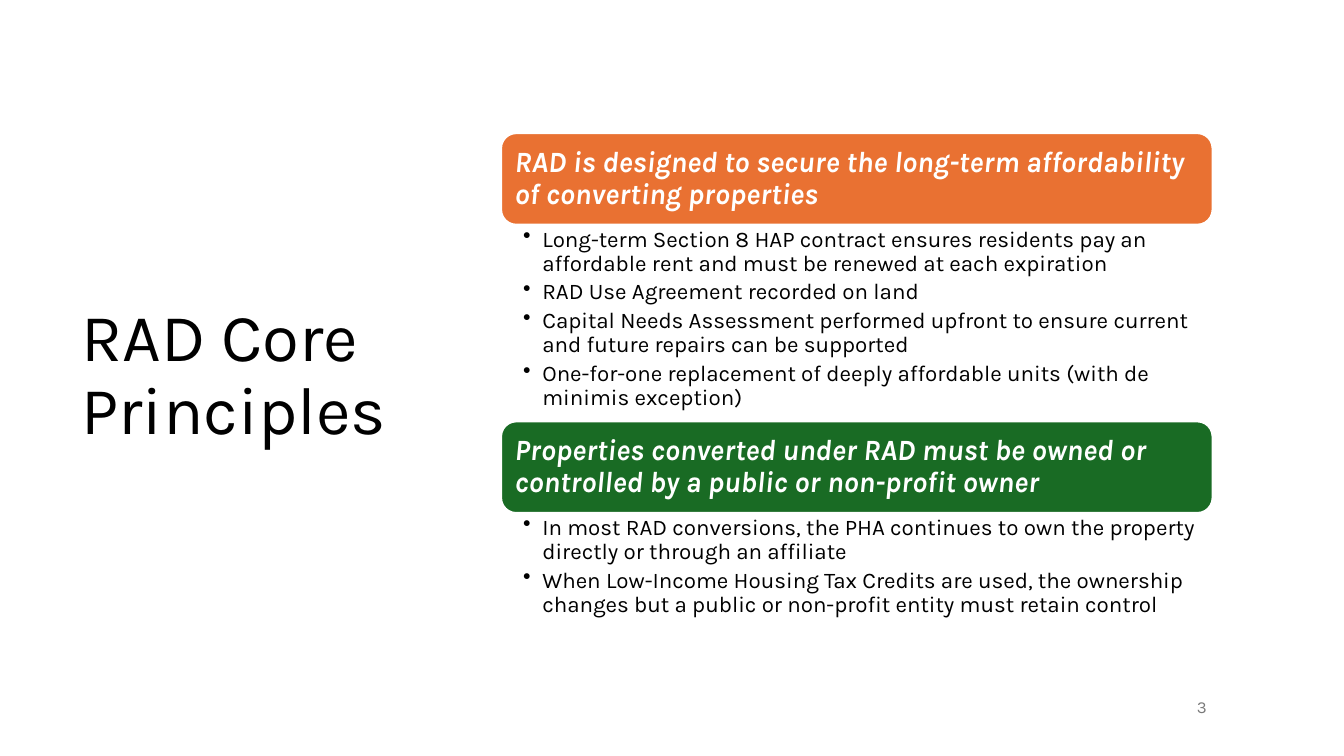
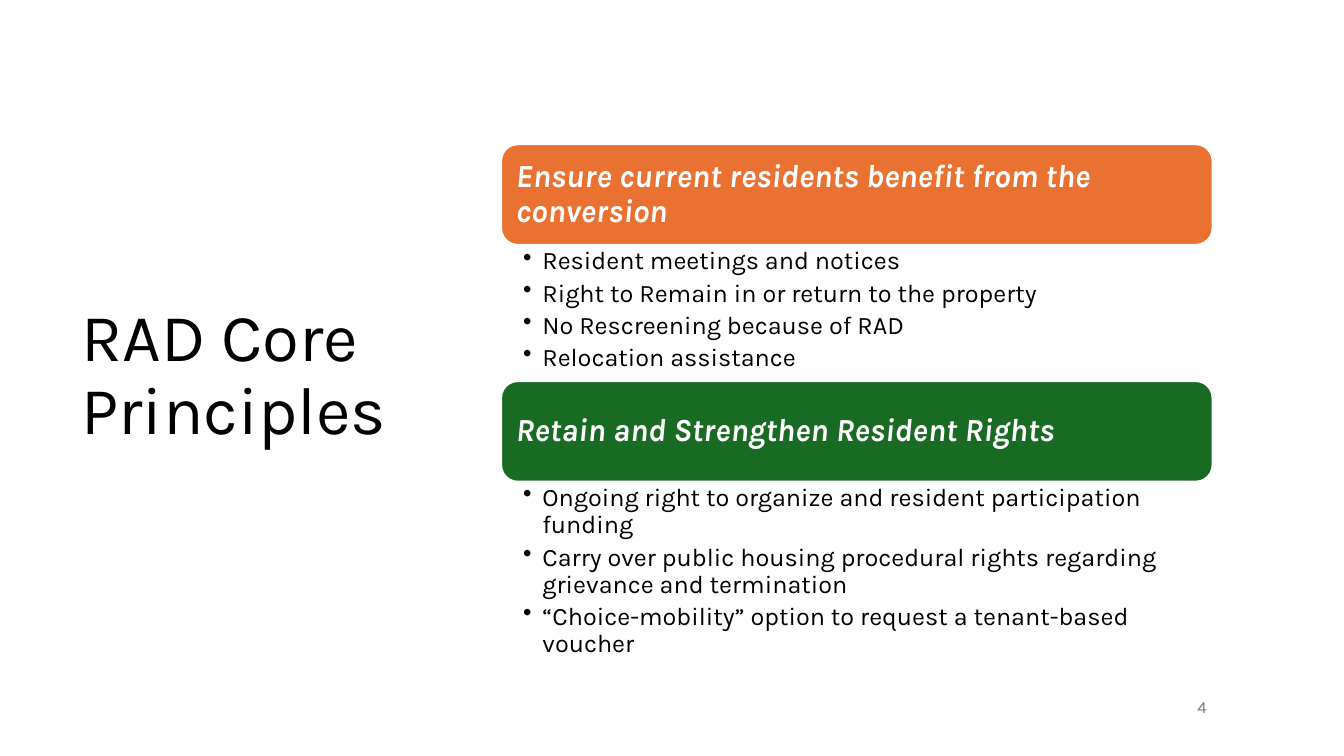
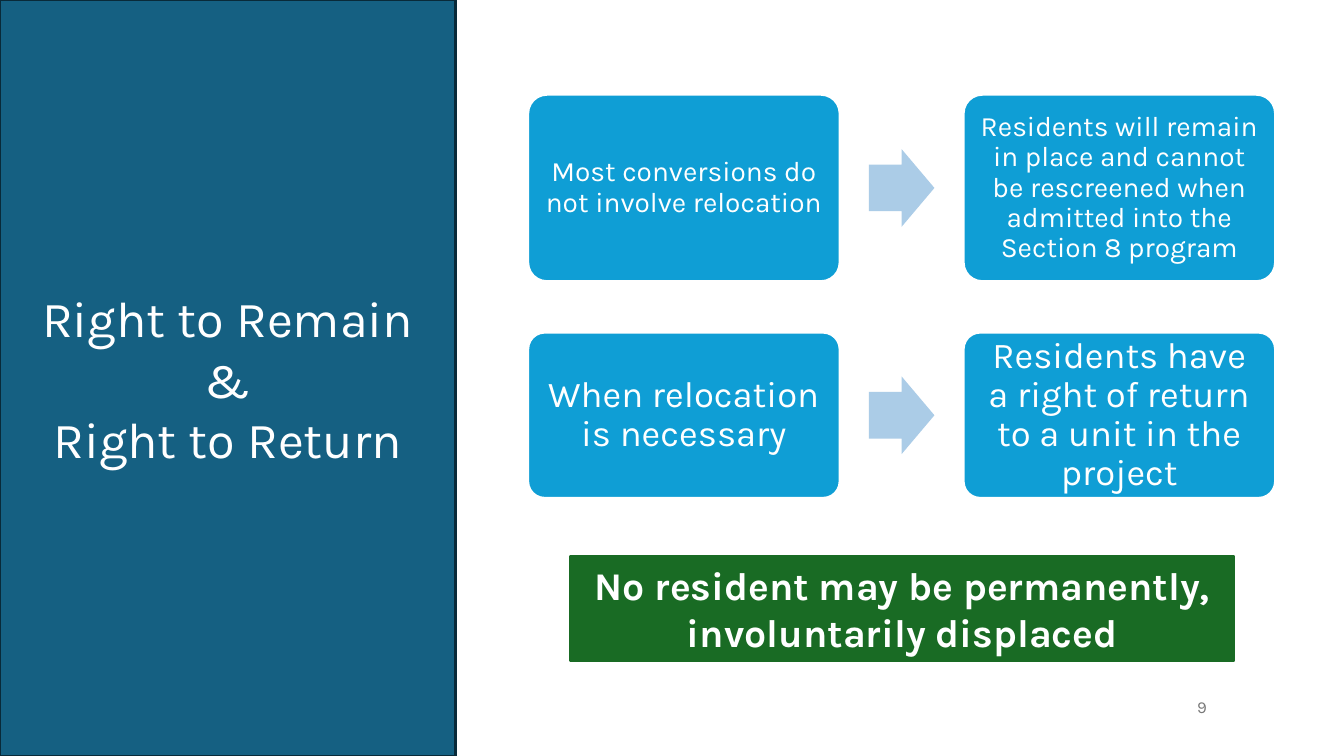
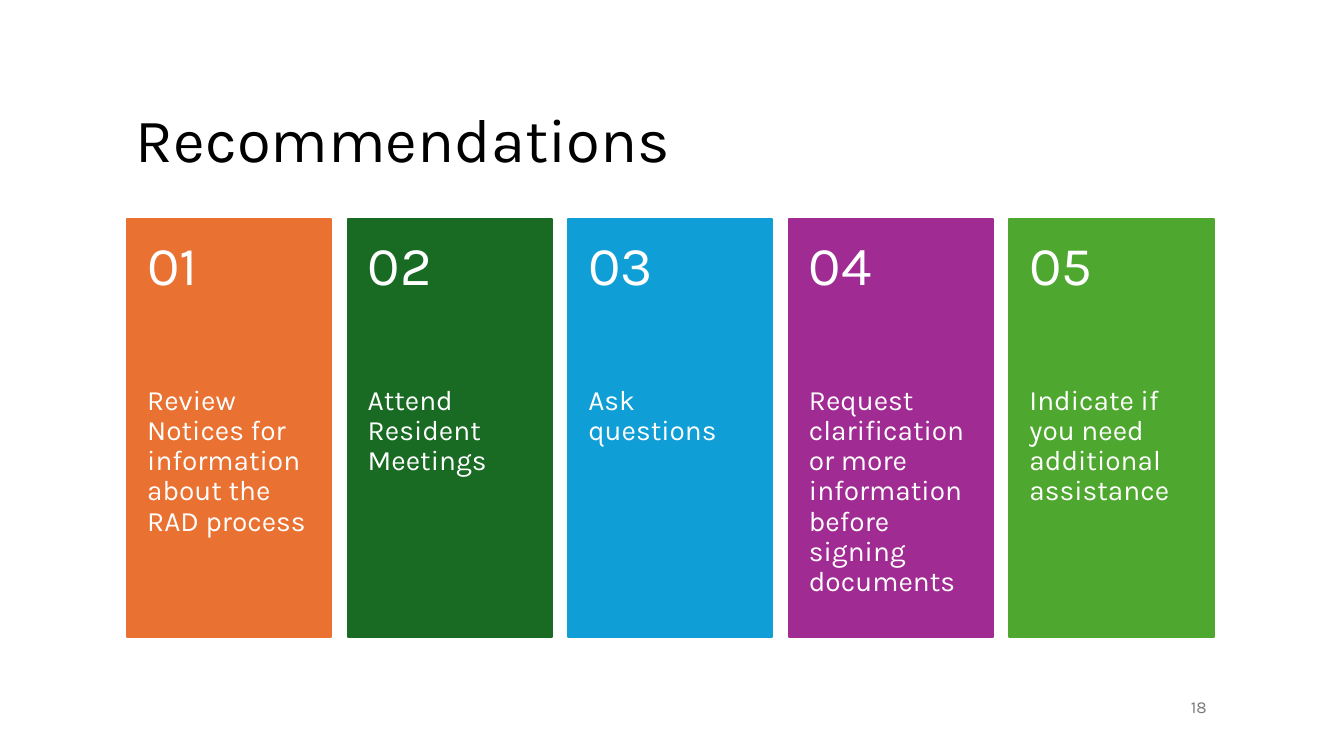
import lxml.etree
import pptx
import pptx.dml.color
import pptx.enum.shapes
import pptx.enum.text
import pptx.oxml.ns
import pptx.util

RGBColor = pptx.dml.color.RGBColor
Shape = pptx.enum.shapes.MSO_SHAPE
Align = pptx.enum.text.PP_ALIGN
Anchor = pptx.enum.text.MSO_ANCHOR

WHITE = RGBColor(0xFF, 0xFF, 0xFF)
BLACK = RGBColor(0x00, 0x00, 0x00)
GRAY = RGBColor(0x79, 0x79, 0x79)
ORANGE = RGBColor(0xE9, 0x71, 0x32)
DARK_GREEN = RGBColor(0x19, 0x6B, 0x24)
BLUE = RGBColor(0x0F, 0x9E, 0xD5)
PALE_BLUE = RGBColor(0xAB, 0xCC, 0xE7)
PURPLE = RGBColor(0xA0, 0x2B, 0x93)
GREEN = RGBColor(0x4E, 0xA7, 0x2E)
TEAL = RGBColor(0x15, 0x60, 0x82)
NAVY = RGBColor(0x09, 0x2A, 0x39)

FONT = "Karla"
WIDTH, HEIGHT = 13.33, 7.5
COLUMN = pptx.util.Inches(WIDTH / 100)
ROW = pptx.util.Inches(HEIGHT / 100)
DEFAULT_INSETS = (0.1, 0.05, 0.1, 0.05)
TIGHT = 0.9

SIDE_TITLE = (5.33, 8.93, 27.6, 81.73)
TOP_TITLE = (9.38, 8.93, 81, 19.73)
NUMBER_RIGHT = 90.53


def place(left, top, width, height):
    """Turn grid columns and rows (100 each way) into slide lengths."""
    return (round(left * COLUMN), round(top * ROW),
            round(width * COLUMN), round(height * ROW))


def write(shape, lines, size, color=WHITE, align=Align.LEFT, anchor=Anchor.MIDDLE,
          insets=DEFAULT_INSETS, spacing=1.0, bold=False, italic=False):
    frame = shape.text_frame
    frame.word_wrap = True
    frame.vertical_anchor = anchor
    (frame.margin_left, frame.margin_top,
     frame.margin_right, frame.margin_bottom) = map(pptx.util.Inches, insets)
    for index, line in enumerate(lines):
        paragraph = frame.paragraphs[0] if index == 0 else frame.add_paragraph()
        paragraph.alignment = align
        paragraph.line_spacing = spacing
        run = paragraph.add_run()
        run.text = line
        run.font.name = FONT
        run.font.size = pptx.util.Pt(size)
        run.font.bold = bold
        run.font.italic = italic
        run.font.color.rgb = color
    return frame.paragraphs


def add_text(slide, area, lines, size, **style):
    box = slide.shapes.add_textbox(*place(*area))
    return write(box, lines, size, **style)


def add_block(slide, kind, area, fill, line=None, adjustments=()):
    block = slide.shapes.add_shape(kind, *place(*area))
    block.shadow.inherit = False
    block.fill.solid()
    block.fill.fore_color.rgb = fill
    if line is None:
        block.line.fill.background()
    else:
        block.line.color.rgb = line
        block.line.width = pptx.util.Pt(1.5)
    for index, value in enumerate(adjustments):
        block.adjustments[index] = value
    return block


def add_bullets(slide, area, items, size, right_inset):
    paragraphs = add_text(slide, area, items, size, color=BLACK, anchor=Anchor.TOP,
                          insets=(0.22, 0.03, right_inset, 0.03), spacing=TIGHT)
    indent = pptx.util.Inches(0.19)
    for paragraph in paragraphs:
        paragraph.space_after = pptx.util.Pt(0.2 * size)
        properties = paragraph._p.get_or_add_pPr()
        properties.set("marL", str(indent))
        properties.set("indent", str(-indent))
        bullet = lxml.etree.SubElement(properties, pptx.oxml.ns.qn("a:buChar"))
        bullet.set("char", "•")


def add_title(slide, area, text, size):
    add_text(slide, area, [text], size, color=BLACK, spacing=TIGHT)


def add_slide(presentation, number, number_width=14):
    """Add a blank slide with its number at the lower right."""
    slide = presentation.slides.add_slide(presentation.slide_layouts[6])
    add_text(slide, (NUMBER_RIGHT - number_width, 90.8, number_width, 5.33),
             [str(number)], 12, color=GRAY, align=Align.RIGHT)
    return slide


def add_principles(presentation, number, top, banner_height, banner_size, banner_inset,
                   bullet_size, right_inset, sections):
    """Stack banners, each followed by its bullets; a section ends with its list height."""
    slide = add_slide(presentation, number)
    add_title(slide, SIDE_TITLE, "RAD Core Principles", 48)
    left, width = 37.28, 52.95
    for color, (heading, items, list_height) in zip((ORANGE, DARK_GREEN), sections):
        banner = add_block(slide, Shape.ROUNDED_RECTANGLE,
                           (left, top, width, banner_height), color, WHITE)
        write(banner, [heading], banner_size, insets=(banner_inset,) * 4,
              spacing=TIGHT, bold=True, italic=True)
        top += banner_height
        add_bullets(slide, (left, top, width, list_height), items, bullet_size, right_inset)
        top += list_height


def add_rights(presentation):
    slide = add_slide(presentation, 9, number_width=8.78)
    callout = add_block(slide, Shape.RECTANGLE, (42.45, 73.6, 49.35, 13.87),
                        DARK_GREEN, DARK_GREEN)
    write(callout, ["No resident may be permanently, involuntarily displaced"], 28,
          align=Align.CENTER, anchor=Anchor.TOP, bold=True)

    left, card_width, gap = 39.3, 23.18, 9.22
    arrow_width, arrow_height = 4.88, 10.27
    rows = [
        (12.53, 24.67, 20, 0.08,
         ("Most conversions do not involve relocation",
          "Residents will remain in place and cannot be rescreened when admitted "
          "into the Section 8 program")),
        (44, 21.87, 26, 0.11,
         ("When relocation is necessary",
          "Residents have a right of return to a unit in the project")),
    ]
    for top, height, size, inset, texts in rows:
        for index, text in enumerate(texts):
            area = (left + index * (card_width + gap), top, card_width, height)
            card = add_block(slide, Shape.ROUNDED_RECTANGLE, area, BLUE, WHITE, (0.1,))
            write(card, [text], size, align=Align.CENTER, insets=(inset,) * 4,
                  spacing=TIGHT)
        add_block(slide, Shape.RIGHT_ARROW,
                  (left + card_width + (gap - arrow_width) / 2,
                   top + (height - arrow_height) / 2, arrow_width, arrow_height),
                  PALE_BLUE, adjustments=(0.6, 0.5))

    panel = add_block(slide, Shape.RECTANGLE, (0, 0, 33.9, 100), TEAL, NAVY)
    write(panel, ["Right to Remain", "&", "Right to Return"], 36, align=Align.CENTER)


def add_recommendations(presentation):
    slide = add_slide(presentation, 18)
    add_title(slide, TOP_TITLE, "Recommendations", 44)
    steps = [
        (ORANGE, "Review Notices for information about the RAD process"),
        (DARK_GREEN, "Attend Resident Meetings"),
        (BLUE, "Ask questions"),
        (PURPLE, "Request clarification or more information before signing documents"),
        (GREEN, "Indicate if you need additional assistance"),
    ]
    left, top, span, height = 9.45, 28.93, 80.85, 55.33
    gap_share = 0.08
    width = span / (len(steps) + gap_share * (len(steps) - 1))
    for index, (color, text) in enumerate(steps):
        x = left + index * width * (1 + gap_share)
        add_block(slide, Shape.RECTANGLE, (x, top, width, height), color, color)
        add_text(slide, (x, top + 0.4 * height, width, 0.6 * height), [text], 20,
                 anchor=Anchor.TOP, insets=(0.2, 0, 0.2, 0.36), spacing=TIGHT)
        add_text(slide, (x, top, width, 12.93), [f"{index + 1:02d}"], 39,
                 insets=(0.2, 0.18, 0.2, 0.18), spacing=TIGHT)


def main():
    presentation = pptx.Presentation()
    presentation.slide_width = pptx.util.Inches(WIDTH)
    presentation.slide_height = pptx.util.Inches(HEIGHT)
    add_principles(
        presentation, 3, top=17.6, banner_height=12.13, banner_size=21,
        banner_inset=0.09, bullet_size=16, right_inset=0.16, sections=[
            ("RAD is designed to secure the long-term affordability of converting properties",
             ["Long-term Section 8 HAP contract ensures residents pay an affordable rent "
              "and must be renewed at each expiration",
              "RAD Use Agreement recorded on land",
              "Capital Needs Assessment performed upfront to ensure current and future "
              "repairs can be supported",
              "One-for-one replacement of deeply affordable units (with de minimis exception)"],
             26),
            ("Properties converted under RAD must be owned or controlled by a public or "
             "non-profit owner",
             ["In most RAD conversions, the PHA continues to own the property directly or "
              "through an affiliate",
              "When Low-Income Housing Tax Credits are used, the ownership changes but a "
              "public or non-profit entity must retain control"],
             14.53),
        ])
    add_principles(
        presentation, 4, top=19.07, banner_height=13.33, banner_size=23,
        banner_inset=0.1, bullet_size=18, right_inset=0.18, sections=[
            ("Ensure current residents benefit from the conversion",
             ["Resident meetings and notices",
              "Right to Remain in or return to the property",
              "No Rescreening because of RAD",
              "Relocation assistance"],
             18),
            ("Retain and Strengthen Resident Rights",
             ["Ongoing right to organize and resident participation funding",
              "Carry over public housing procedural rights regarding grievance and termination",
              "“Choice-mobility” option to request a tenant-based voucher"],
             17.33),
        ])
    add_rights(presentation)
    add_recommendations(presentation)
    presentation.save("out.pptx")


if __name__ == "__main__":
    main()
